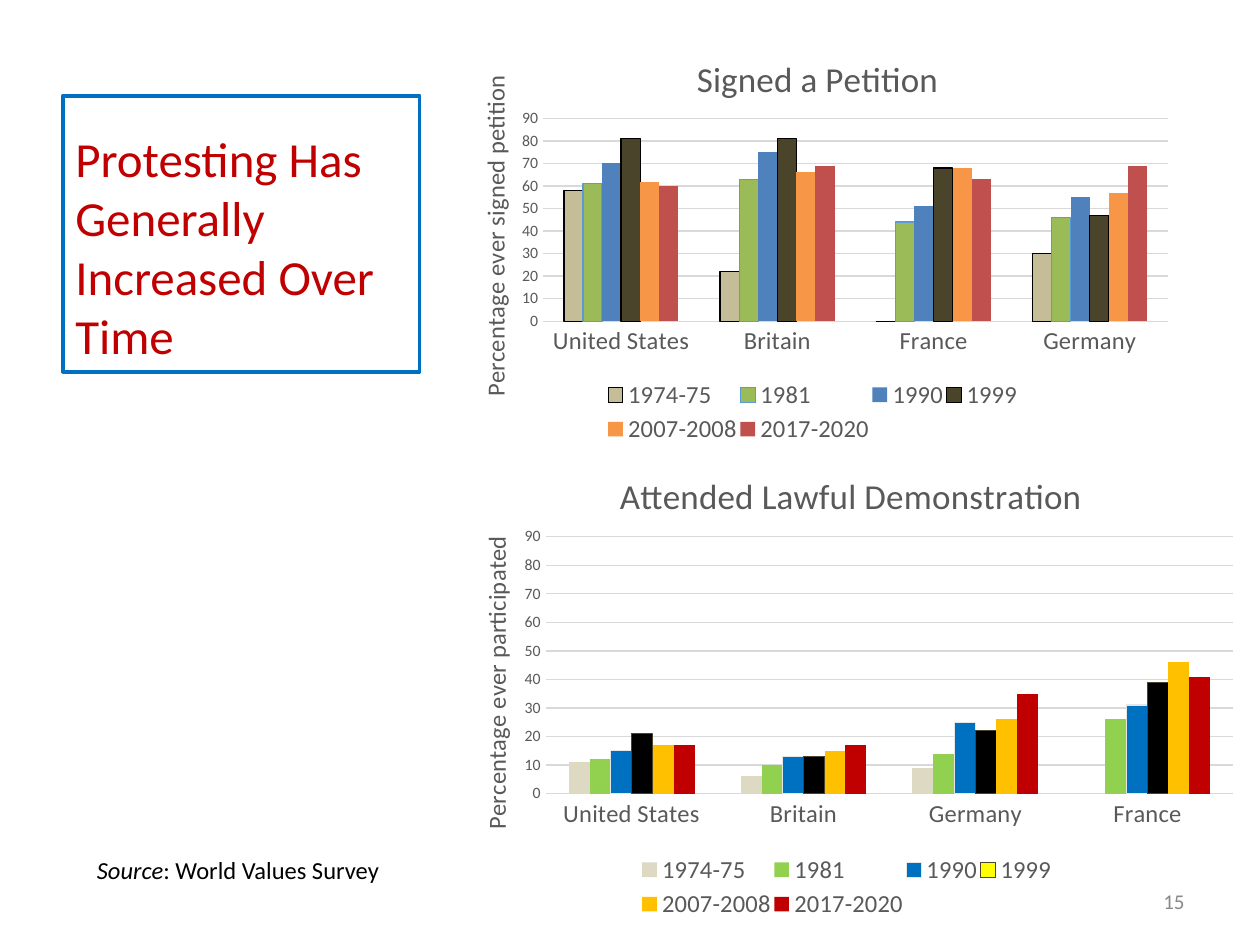
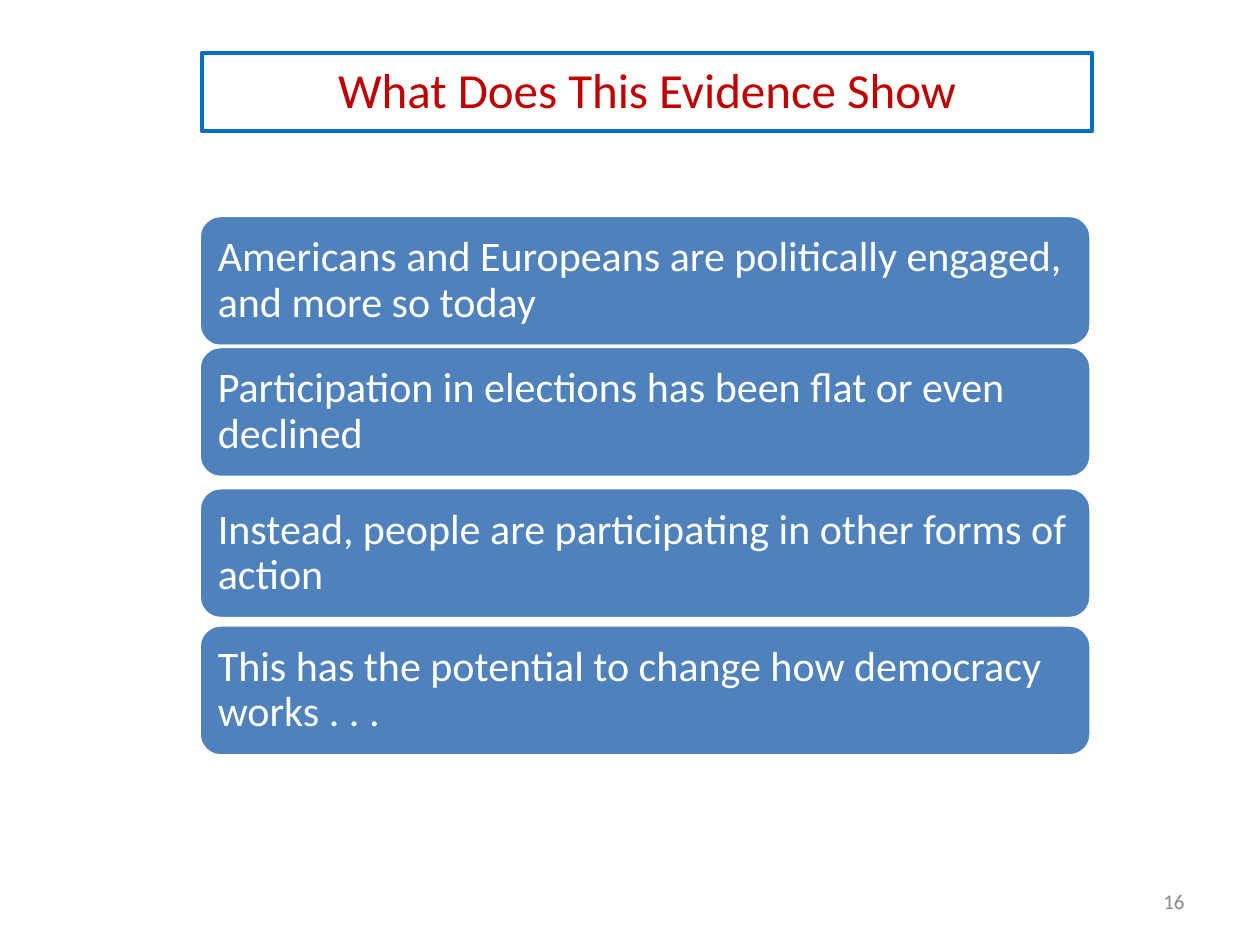
import pptx
import pptx.util
import pptx.dml.color
import pptx.chart.data
import pptx.enum.chart
import pptx.enum.shapes
import pptx.enum.text
import pptx.oxml
import pptx.oxml.ns

Inches, Pt = pptx.util.Inches, pptx.util.Pt
ANCHOR = pptx.enum.text.MSO_ANCHOR
ALIGN = pptx.enum.text.PP_ALIGN
SHAPES = pptx.enum.shapes.MSO_SHAPE

FONT = "Calibri"
RED, BLUE, STEEL, WHITE = "C00000", "0070C0", "4F81BD", "FFFFFF"
CHART_TEXT, GRID, NUMBER_GREY = "595959", "D9D9D9", "898989"
BLACK = "000000"

YEARS = ["1974-75", "1981", "1990", "1999", "2007-2008", "2017-2020"]

DEMONSTRATION = {
    "title": "Attended Lawful Demonstration",
    "axis": "Percentage ever participated",
    "countries": ["United States", "Britain", "Germany", "France"],
    "values": [[11, 6, 9, 0], [12, 10, 14, 26], [15, 13, 25, 31],
               [21, 13, 22, 39], [17, 15, 26, 46], [17, 17, 35, 41]],
    "fills": ["DDD9C3", "92D050", BLUE, "FFFF00", "FFC000", RED],
    "outlines": {"1990": "E7E6E6", "1999": "4A452A"},
    "bar_fills": {"1999": BLACK},
    "box": (3.5, 3.47, 6.42, 3.86),
    "plot_at": (4.33, 4.26, 5.46, 2.04),
    "title_at": (4.87, 3.69),
    "axis_at": (3.77, 4.22),
    "legend_at": (5.07, 6.75, 3.3, 0.58),
}
PETITION = {
    "title": "Signed a Petition",
    "axis": "Percentage ever signed petition",
    "countries": ["United States", "Britain", "France", "Germany"],
    "values": [[58, 22, 0, 30], [61, 63, 44, 46], [70, 75, 51, 55],
               [81, 81, 68, 47], [62, 66, 68, 57], [60, 69, 63, 69]],
    "fills": ["C4BD97", "9BBB59", STEEL, "4A452A", "F79646", "C0504D"],
    "outlines": {"1974-75": BLACK, "1981": "5B9BD5", "1999": BLACK},
    "bar_fills": {},
    "box": (3.5, 0.17, 5.89, 3.4),
    "plot_at": (4.31, 0.94, 4.96, 1.61),
    "title_at": (5.48, 0.38),
    "axis_at": (3.76, 0.56),
    "legend_at": (4.8, 2.98, 3.3, 0.58),
}

PROTEST_TITLE = "Protesting Has Generally Increased Over Time"
SOURCE = [("Source", True), (": World Values Survey", False)]
EVIDENCE_TITLE = "What Does This Evidence Show"
FINDINGS = [
    (1.71, "Americans and Europeans are politically engaged, and more so today"),
    (2.75, "Participation in elections has been flat or even declined"),
    (3.87, "Instead, people are participating in other forms of action"),
    (4.96, "This has the potential to change how democracy works . . ."),
]


def rgb(hex_string):
    return pptx.dml.color.RGBColor.from_string(hex_string)


def apply(target, values):
    for name, value in values.items():
        setattr(target, name, value)


def set_font(font, size, color, italic=False):
    apply(font, {"name": FONT, "size": Pt(size), "bold": False, "italic": italic})
    font.color.rgb = rgb(color)


def set_fill(fill, color):
    if color:
        fill.solid()
        fill.fore_color.rgb = rgb(color)
    else:
        fill.background()


def set_line(line, color, width=0.75):
    set_fill(line.fill, color)
    if color:
        line.width = Pt(width)


def write(shape, runs, size, color, frame=None, paragraph=None):
    apply(shape.text_frame, {"word_wrap": True, **(frame or {})})
    line = shape.text_frame.paragraphs[0]
    apply(line, {"alignment": ALIGN.LEFT, **(paragraph or {})})
    for text, italic in runs:
        run = line.add_run()
        run.text = text
        set_font(run.font, size, color, italic)


def add_box(slide, kind, box, fill, outline, width):
    shape = slide.shapes.add_shape(kind, *map(Inches, box))
    shape.shadow.inherit = False
    set_fill(shape.fill, fill)
    set_line(shape.line, outline, width)
    return shape


def add_text(slide, box, runs, size, color, frame=None, paragraph=None):
    write(slide.shapes.add_textbox(*map(Inches, box)), runs, size, color, frame, paragraph)


def add_title(slide, box, text, frame, paragraph=None):
    title = add_box(slide, SHAPES.RECTANGLE, box, None, BLUE, 2.25)
    write(title, [(text, False)], 28, RED, frame, paragraph)


def add_number(slide, number):
    add_text(slide, (7.17, 6.95, 2.33, 0.4), [(str(number), False)], 12, NUMBER_GREY,
             {"vertical_anchor": ANCHOR.MIDDLE}, {"alignment": ALIGN.RIGHT})


def place(element, index, chart_box, part_box, inner=False):
    left, top, width, height = chart_box
    settings = [("layoutTarget", "inner")] if inner else []
    settings += [("xMode", "edge"), ("yMode", "edge")]
    settings += [("x", (part_box[0] - left) / width), ("y", (part_box[1] - top) / height)]
    if len(part_box) == 4:
        settings += [("w", part_box[2] / width), ("h", part_box[3] / height)]
    for old in element.findall(pptx.oxml.ns.qn("c:layout")):
        element.remove(old)
    parts = "".join(f'<c:{name} val="{value}"/>' for name, value in settings)
    element.insert(index, pptx.oxml.parse_xml(
        f'<c:layout {pptx.oxml.ns.nsdecls("c")}><c:manualLayout>{parts}</c:manualLayout></c:layout>'))


def name_part(title, text, size):
    title.text_frame.text = text
    set_font(title.text_frame.paragraphs[0].runs[0].font, size, CHART_TEXT)


def add_survey_chart(slide, survey):
    data = pptx.chart.data.CategoryChartData()
    data.categories = survey["countries"]
    for year, values in zip(YEARS, survey["values"]):
        data.add_series(year, values)
    box = survey["box"]
    chart = slide.shapes.add_chart(pptx.enum.chart.XL_CHART_TYPE.COLUMN_CLUSTERED,
                                   *map(Inches, box), data).chart
    set_font(chart.font, 10, BLACK)
    name_part(chart.chart_title, survey["title"], 20)

    plot = chart.plots[0]
    apply(plot, {"vary_by_categories": False, "gap_width": 219, "overlap": 0})
    for series, fill in zip(plot.series, survey["fills"]):
        outline = survey["outlines"].get(series.name)
        set_fill(series.format.fill, fill)
        set_line(series.format.line, outline)
        if series.name in survey["bar_fills"]:
            for index in range(len(survey["countries"])):
                bar = series.points[index].format
                set_fill(bar.fill, survey["bar_fills"][series.name])
                set_line(bar.line, outline)

    countries, percentages = chart.category_axis, chart.value_axis
    for axis, size, line in ((countries, 14, GRID), (percentages, 9, None)):
        apply(axis, {"major_tick_mark": pptx.enum.chart.XL_TICK_MARK.NONE,
                     "minor_tick_mark": pptx.enum.chart.XL_TICK_MARK.NONE})
        set_font(axis.tick_labels.font, size, CHART_TEXT)
        set_line(axis.format.line, line)
    apply(percentages, {"minimum_scale": 0, "maximum_scale": 90, "major_unit": 10,
                        "has_major_gridlines": True})
    set_line(percentages.major_gridlines.format.line, GRID)
    name_part(percentages.axis_title, survey["axis"], 14)

    chart.has_legend = True
    apply(chart.legend, {"position": pptx.enum.chart.XL_LEGEND_POSITION.BOTTOM,
                         "include_in_layout": False})
    set_font(chart.legend.font, 14, CHART_TEXT)

    plot_area = chart._chartSpace.find(".//" + pptx.oxml.ns.qn("c:plotArea"))
    place(plot_area, 0, box, survey["plot_at"], inner=True)
    place(chart.chart_title._element, 1, box, survey["title_at"])
    place(percentages.axis_title._element, 1, box, survey["axis_at"])
    place(chart.legend._element, 1, box, survey["legend_at"])


def build_protest(slide):
    add_survey_chart(slide, DEMONSTRATION)
    add_title(slide, (0.5, 0.76, 2.83, 2.19), PROTEST_TITLE,
              {"vertical_anchor": ANCHOR.MIDDLE, "margin_top": Inches(0.25)})
    add_text(slide, (0.67, 6.74, 2.92, 0.34), SOURCE, 14, BLACK)
    add_survey_chart(slide, PETITION)
    add_number(slide, 15)


def build_evidence(slide):
    add_title(slide, (1.6, 0.42, 7.07, 0.62), EVIDENCE_TITLE,
              {"vertical_anchor": ANCHOR.TOP}, {"alignment": ALIGN.CENTER})
    insets = {f"margin_{side}": Inches(0.1) for side in ("left", "top", "right", "bottom")}
    for top, finding in FINDINGS:
        card = add_box(slide, SHAPES.ROUNDED_RECTANGLE, (1.58, top, 7.08, 1.04), STEEL, WHITE, 2)
        write(card, [(finding, False)], 24, WHITE,
              {"vertical_anchor": ANCHOR.MIDDLE, **insets}, {"line_spacing": 0.9})
    add_number(slide, 16)


def main():
    deck = pptx.Presentation()
    apply(deck, {"slide_width": Inches(10), "slide_height": Inches(7.5)})
    for build in (build_protest, build_evidence):
        build(deck.slides.add_slide(deck.slide_layouts[6]))
    deck.save("out.pptx")


if __name__ == "__main__":
    main()
